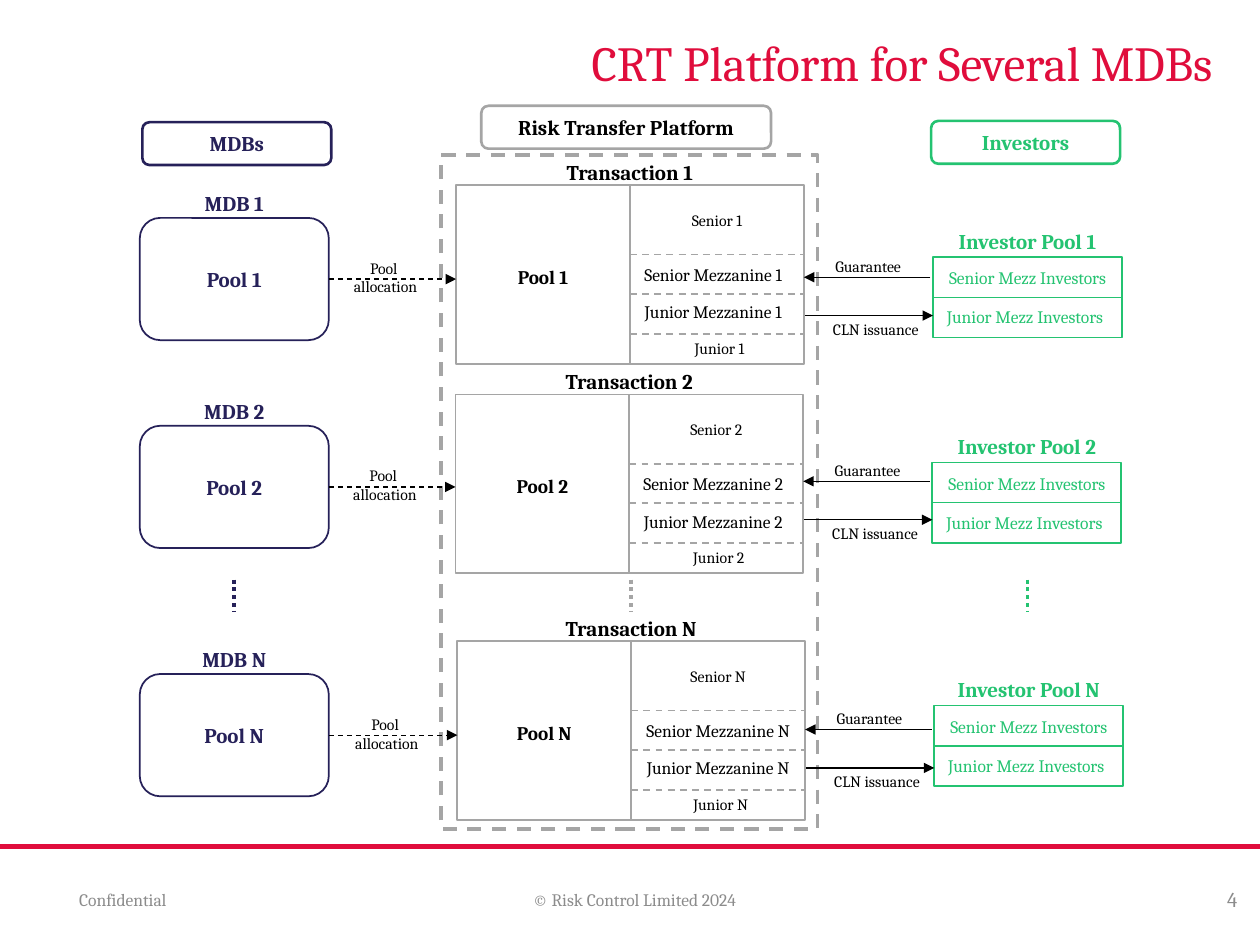
"""Builds the slide that shows a credit risk transfer platform for several MDBs."""
from dataclasses import dataclass

from lxml.etree import SubElement
from pptx import Presentation
from pptx.dml.color import RGBColor
from pptx.enum.dml import MSO_LINE as Dash
from pptx.enum.shapes import MSO_CONNECTOR as Link, MSO_SHAPE as Shape
from pptx.enum.text import MSO_ANCHOR as Anchor, MSO_AUTO_SIZE as Fit, PP_ALIGN as Align
from pptx.oxml.ns import qn
from pptx.util import Inches, Pt


@dataclass(frozen=True)
class Theme:
    font: str = "Cambria"
    red: str = "E00D3C"
    navy: str = "262159"
    green: str = "24C371"
    grey: str = "A5A5A5"
    footer: str = "8C8C8C"
    black: str = "000000"
    white: str = "FFFFFF"
    title: int = 28
    heading: int = 12
    pool: int = 11
    body: int = 10
    small: int = 9


theme = Theme()
deck = Presentation()
deck.slide_width, deck.slide_height = Inches(10), Inches(7.5)
column, row = deck.slide_width / 100, deck.slide_height / 75
page = deck.slides.add_slide(deck.slide_layouts[5])


def write(text, left, top, width, height, *, kind=None, holder=None, size=theme.body,
          color=theme.black, bold=False, align=Align.CENTER, anchor=Anchor.MIDDLE,
          fill=None, line=None, weight=1, dash=None, inset=0.8):
    place = [round(n) for n in (left * column, top * row, width * column, height * row)]
    if holder is not None:
        box = holder
        box.left, box.top, box.width, box.height = place
    elif kind is None:
        box = page.shapes.add_textbox(*place)
    else:
        box = page.shapes.add_shape(kind, *place)
        box.shadow.inherit = False
        box.fill.background()
        if fill:
            box.fill.solid()
            box.fill.fore_color.rgb = RGBColor.from_string(fill)
        box.line.color.rgb = RGBColor.from_string(line)
        box.line.width = Pt(weight)
        if dash:
            box.line.dash_style = dash
    frame = box.text_frame
    frame.auto_size, frame.word_wrap, frame.vertical_anchor = Fit.NONE, True, anchor
    frame.margin_left = frame.margin_right = round(inset * column)
    frame.margin_top = frame.margin_bottom = round(inset * row / 2)
    para = frame.paragraphs[0]
    para.text, para.alignment = text, align
    for span in para.runs:
        span.font.name, span.font.size, span.font.bold = theme.font, Pt(size), bold
        span.font.color.rgb = RGBColor.from_string(color)
    return box


def draw_line(start, end, color, weight, dash=None, arrow=False, begin=None, finish=None):
    link = page.shapes.add_connector(
        Link.STRAIGHT, round(start[0] * column), round(start[1] * row),
        round(end[0] * column), round(end[1] * row))
    if begin:
        link.begin_connect(*begin)
    if finish:
        link.end_connect(*finish)
    link.line.color.rgb = RGBColor.from_string(color)
    link.line.width = Pt(weight)
    if dash:
        link.line.dash_style = dash
    properties = link._element.spPr
    if arrow:
        SubElement(properties.find(qn("a:ln")), qn("a:tailEnd"), type="triangle")
    SubElement(properties, qn("a:effectLst"))


write("CRT Platform for Several MDBs", 7, 2.2, 90, 7.9, holder=page.shapes.title,
      size=theme.title, color=theme.red, align=Align.RIGHT, anchor=Anchor.TOP)

draw_line((0, 67.2), (100, 67.2), theme.red, 2.5)
for text, left, width, size, align in (
        ("Confidential", 5.3, 23.3, theme.body, Align.LEFT),
        ("© Risk Control Limited 2024", 34.5, 31.7, theme.body, Align.CENTER),
        ("4", 75.9, 23.3, theme.heading, Align.RIGHT)):
    write(text, left, 69.4, width, 4, size=size, color=theme.footer, align=align, inset=1)

write("", 35, 12.3, 29.9, 53.5, kind=Shape.RECTANGLE, fill=theme.white,
      line=theme.grey, weight=2, dash=Dash.DASH)

for text, left, top, width, color, outline, dots in (
        ("MDBs", 11.3, 9.7, 15, theme.navy, theme.navy, 18.55),
        ("Risk Transfer Platform", 38.2, 8.4, 23, theme.black, theme.grey, 50.1),
        ("Investors", 73.9, 9.6, 15, theme.green, theme.green, 81.55)):
    write(text, left, top, width, 3.4, kind=Shape.ROUNDED_RECTANGLE, size=theme.heading,
          color=color, bold=True, fill=theme.white, line=outline, weight=1.5)
    draw_line((dots, 46), (dots, 48.5), outline, 2.25, Dash.ROUND_DOT)

mdb_left, side_width = 11.1, 15
platform_width, platform_height = 27.6, 14.2
half = platform_width / 2
investor_height = 6.4

for name, left, top, mdb_top, investor_top, guarantee, mezzanine_left in (
        ("1", 36.2, 14.7, 17.3, 20.4, 22, 49.7),
        ("2", 36.15, 31.3, 33.8, 36.7, 38.2, 49.7),
        ("N", 36.3, 50.9, 53.5, 56, 57.9, 50.1)):
    middle, right = left + half, left + platform_width
    investor_left = left + 37.85

    write(f"Transaction {name}", middle - 7.5, top - 2.45, 15, 2.8,
          size=theme.heading, bold=True)
    platform = write("", left, top, platform_width, platform_height,
                     kind=Shape.RECTANGLE, fill=theme.white, line=theme.grey)
    draw_line((middle, top + platform_height), (middle, top), theme.grey, 1,
              begin=(platform, 2), finish=(platform, 0))
    for offset in (5.5, 8.65, 11.8):
        draw_line((middle, top + offset), (right, top + offset), theme.grey, 1, Dash.DASH)
    write(f"Pool {name}", left, top + 6, half, 2.6, size=theme.pool, bold=True)
    for label, text_left, offset, size in (
            ("Senior", middle, 1.5, theme.small),
            ("Senior Mezzanine", mezzanine_left, 5.8, theme.body),
            ("Junior Mezzanine", mezzanine_left, 8.8, theme.body),
            ("Junior", middle + 0.2, 11.7, theme.small)):
        write(f"{label} {name}", text_left, top + offset, half, 2.5, size=size)

    write(f"MDB {name}", mdb_left, mdb_top - 2.6, side_width, 2.8,
          size=theme.heading, color=theme.navy, bold=True)
    pool = write(f"Pool {name}", mdb_left, mdb_top, side_width, 9.7,
                 kind=Shape.ROUNDED_RECTANGLE, size=theme.heading, color=theme.navy,
                 bold=True, line=theme.navy)
    pool_middle = mdb_top + 9.7 / 2
    write("Pool \vallocation", left - 10.1, pool_middle - 2.05, 9, 3.8, size=theme.small)
    draw_line((mdb_left + side_width, pool_middle), (left, pool_middle), theme.black, 0.75,
              Dash.DASH, arrow=True, begin=(pool, 3))

    write(f"Investor Pool {name}", investor_left, investor_top - 2.7, side_width, 2.8,
          size=theme.heading, color=theme.green, bold=True)
    investors = write("", investor_left, investor_top, side_width, investor_height,
                      kind=Shape.RECTANGLE, line=theme.green)
    investor_middle = investor_top + investor_height / 2
    draw_line((investor_left, investor_middle), (investor_left + side_width, investor_middle),
              theme.green, 0.75, begin=(investors, 1), finish=(investors, 3))
    for label, shift, offset in (("Senior", 0, 0.4), ("Junior", -0.2, 3.5)):
        write(f"{label} Mezz Investors", investor_left + shift, investor_top + offset,
              side_width, 2.5, color=theme.green)

    issuance = guarantee + 3.05
    write("Guarantee", left + 28.2, guarantee - 2.05, 9, 2.3, size=theme.small)
    draw_line((investor_left - 0.2, guarantee), (right, guarantee), theme.black, 0.75,
              arrow=True)
    write("CLN issuance", left + 28.8, issuance - 0.1, 9, 2.3, size=theme.small)
    draw_line((right + 0.1, issuance), (investor_left, issuance), theme.black, 0.75,
              arrow=True)

deck.save("out.pptx")
